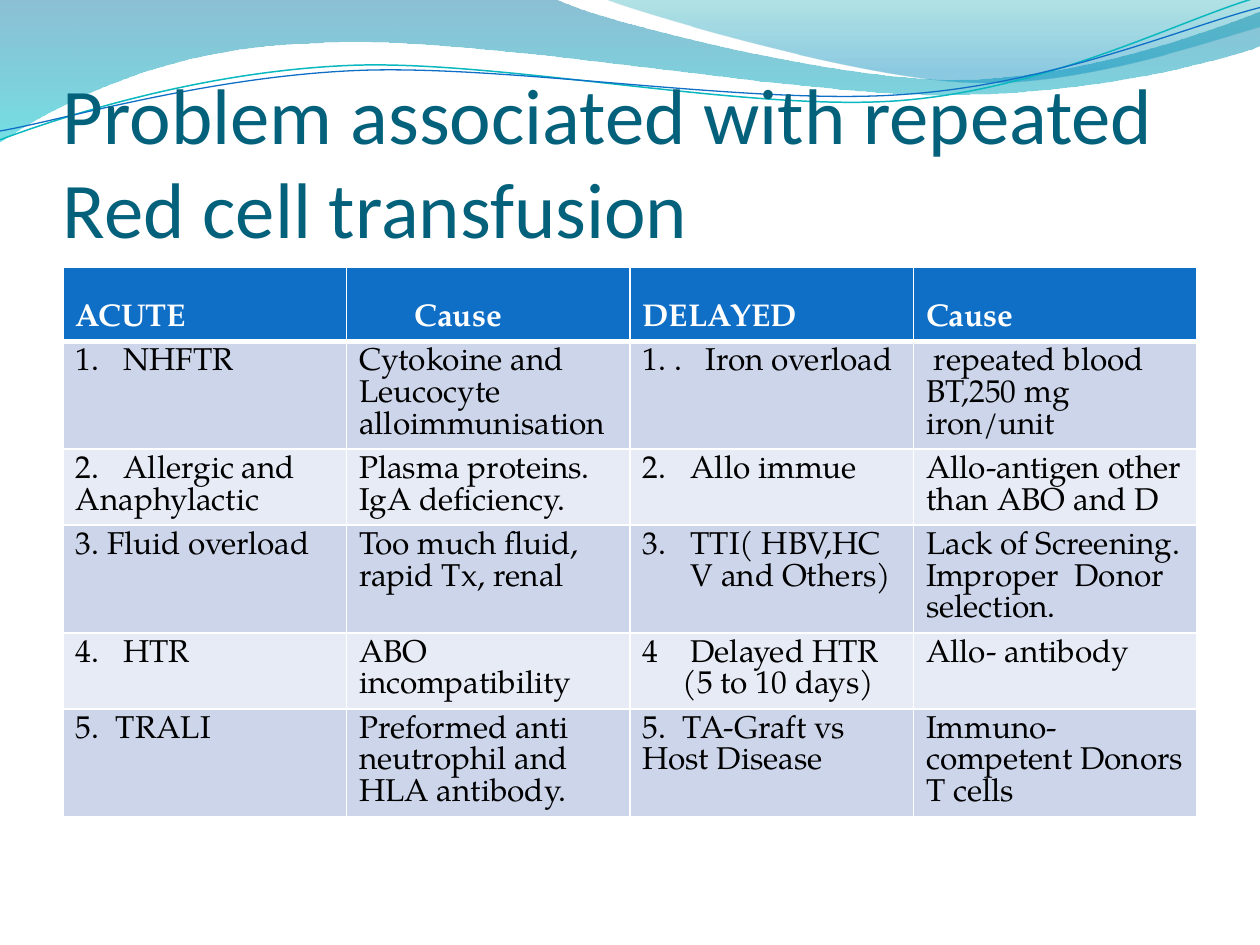
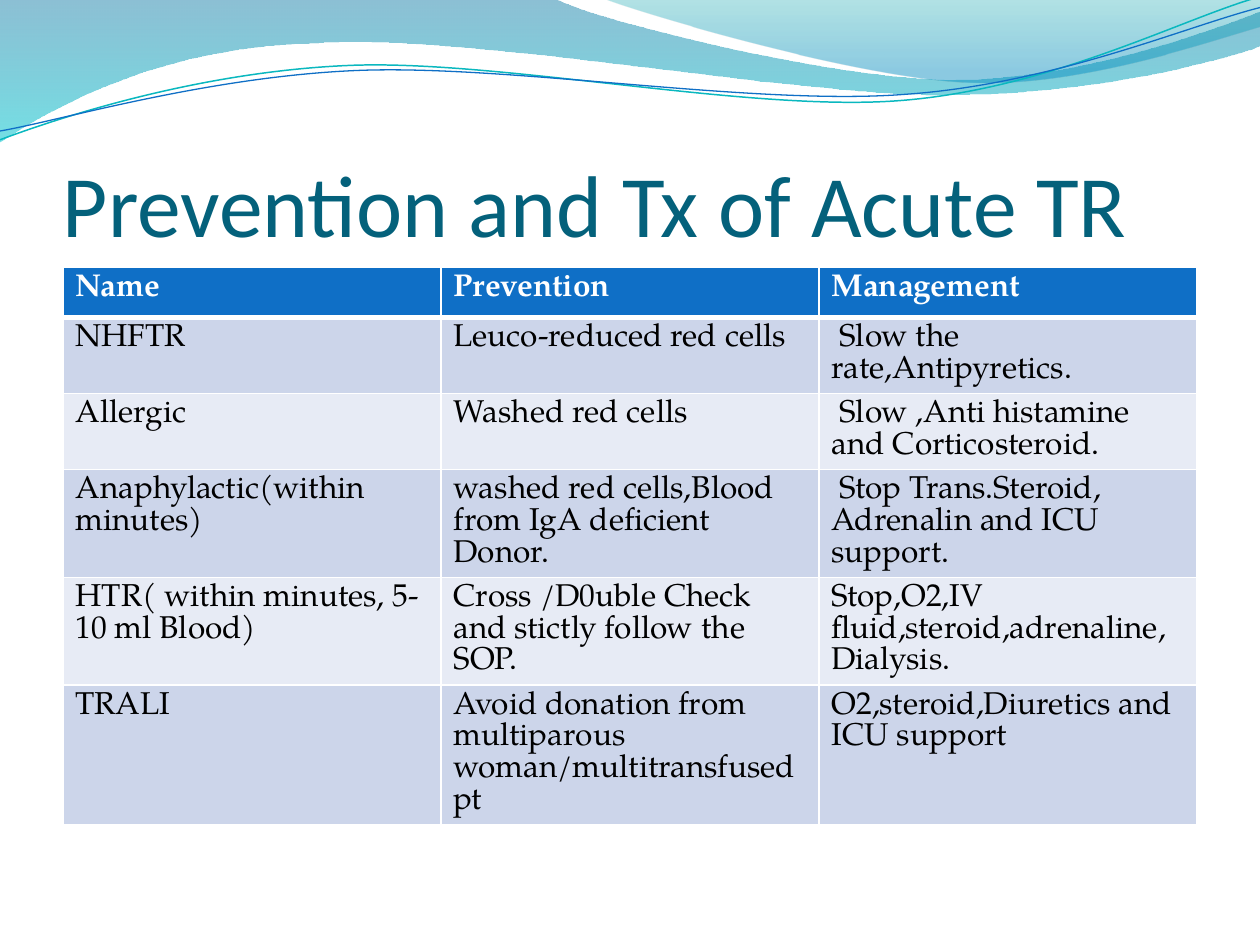
from dataclasses import dataclass

from lxml.etree import SubElement
from pptx import Presentation
from pptx.dml.color import RGBColor
from pptx.enum.text import MSO_ANCHOR as Anchor
from pptx.oxml.ns import qn
from pptx.util import Inches, Pt

COLORS = {
    "title": "04617B", "header": "0F6FC6", "band_dark": "CCD5EA",
    "band_light": "E7EBF5", "white": "FFFFFF", "black": "000000",
    "teal_line": "0AB8BF", "blue_line": "0F6FC6",
    "wave_top": "0074A1", "wave_bottom": "00C6CF",
    "crest_top": "00A1A9", "crest_bottom": "008BBF",
}
TITLE_FONT, TABLE_FONT = "Calibri", "TeX Gyre Pagella"
TABLE_SIZE, TABLE_LEADING = 18, 18.1
TITLE_BOX = (0.5, 0.77, 9, 1.25)
TABLE_BOX = (0.5, 2.12, 9, 2.46)
NUMBER_INDENT = 0.38

# Outlines: a start point, then points (2 numbers) or curves (6 numbers)
WAVE = [(0, 0), (4.4, -0.01), (4.76, 0.17, 6.64, 0.63, 7.58, 0.63),
        (8.53, 0.63, 9.58, 0.26, 10, 0.09), (10.01, 0.36),
        (9.83, 0.44, 8.7, 0.76, 7.46, 0.75),
        (6.22, 0.75, 3.82, 0.28, 2.57, 0.34),
        (1.29, 0.36, 0.46, 0.83, -0.01, 1.13)]
CREST = [(4.79, -0.01), (5.09, 0.11, 6.82, 0.62, 7.69, 0.65),
         (8.56, 0.69, 9.61, 0.32, 10, 0.21), (10, 0)]
TEAL_CURVE = [(0, 1.11), (0.48, 0.93, 1.58, 0.57, 2.77, 0.52),
              (3.95, 0.47, 5.93, 0.89, 7.13, 0.8),
              (8.33, 0.71, 9.38, 0.15, 9.98, -0.02)]
BLUE_CURVE = [(0, 1.04), (0.47, 0.96, 1.64, 0.61, 2.83, 0.56),
              (4.03, 0.51, 5.97, 0.84, 7.17, 0.75),
              (8.36, 0.67, 9.41, 0.21, 10, 0.06)]


@dataclass
class Item:
    """A table paragraph with a list number, an indent or a tab stop."""
    text: str
    number: int = 0
    scheme: str = "arabicPeriod"
    indent: float = 0
    tab: float = 0


PROBLEMS = [
    ["ACUTE", Item("Cause", indent=0.44), "DELAYED", "Cause"],
    [Item("NHFTR", 1), "Cytokoine and Leucocyte alloimmunisation",
     Item("1. .\tIron overload", tab=0.5),
     " repeated blood BT,250 mg iron/unit"],
    [Item("2.\tAllergic and Anaphylactic", tab=NUMBER_INDENT),
     ["Plasma proteins.", "IgA deficiency."],
     Item("Allo immue", 2), "Allo-antigen other than ABO and D"],
    ["3. Fluid overload", "Too much fluid, rapid Tx, renal",
     Item("TTI( HBV,HCV and Others)", 3),
     ["Lack of Screening.", "Improper  Donor selection."]],
    [Item("HTR", 4), "ABO incompatibility",
     [Item("Delayed HTR", 4, "arabicPlain"),
      Item("(5 to 10 days)", indent=0.32)], "Allo- antibody"],
    [Item("5.\tTRALI", tab=0.32),
     "Preformed anti neutrophil and HLA antibody.",
     Item("5.\tTA-Graft vs Host Disease", tab=0.32),
     "Immuno-competent Donors T cells"],
]
TREATMENTS = [
    ["Name", "Prevention", "Management"],
    ["NHFTR", "Leuco-reduced red cells", " Slow the rate,Antipyretics."],
    ["Allergic", "Washed red cells",
     " Slow ,Anti histamine and Corticosteroid."],
    ["Anaphylactic(within minutes)",
     "washed red cells,Blood from IgA deficient Donor.",
     " Stop Trans.Steroid, Adrenalin and ICU support."],
    ["HTR( within minutes, 5-10 ml Blood)",
     "Cross /D0uble Check and stictly follow the SOP.",
     "Stop,O2,IV fluid,steroid,adrenaline,Dialysis."],
    ["TRALI", "Avoid donation from multiparous woman/multitransfused pt",
     "O2,steroid,Diuretics and ICU support"],
]


def rgb(name):
    return RGBColor.from_string(COLORS[name])


def style_font(para, font_name, size, color, bold=False):
    for span in para.runs:
        font = span.font
        font.name, font.size, font.bold = font_name, Pt(size), bold
        font.color.rgb = rgb(color)


# Wave band
def bend_curves(shape, parts):
    """Join each curve's three straight segments into one Bezier segment."""
    segments = iter(list(shape._element.iter(qn("a:lnTo"))))
    for part in parts:
        first = next(segments)
        if len(part) == 2:
            continue
        curve = first.makeelement(qn("a:cubicBezTo"))
        first.addprevious(curve)
        for segment in (first, next(segments), next(segments)):
            curve.append(segment[0])
            segment.getparent().remove(segment)


def add_outline(page, outline, close):
    start, *parts = outline
    knots = [(Inches(part[i]), Inches(part[i + 1]))
             for part in parts for i in range(0, len(part), 2)]
    builder = page.shapes.build_freeform(*map(Inches, start))
    builder.add_line_segments(knots, close=close)
    shape = builder.convert_to_shape()
    bend_curves(shape, parts)
    shape.shadow.inherit = False
    return shape


def add_wave(page, outline, stops):
    """Fill an outline downwards with (position, color, opacity) stops."""
    shape = add_outline(page, outline, True)
    shape.line.fill.background()
    shape.fill.gradient()
    shape.fill.gradient_angle = 270
    for stop, (position, color, _) in zip(shape.fill.gradient_stops, stops):
        stop.position = position
        stop.color.rgb = rgb(color)
    fills = shape._element.spPr.iter(qn("a:srgbClr"))
    for fill, (_, _, opacity) in zip(fills, stops):
        for child in list(fill):
            fill.remove(child)
        SubElement(fill, qn("a:alpha"), val=str(opacity * 1000))


def add_wave_band(page):
    add_wave(page, WAVE, [(0, "wave_top", 45), (1, "wave_bottom", 55)])
    add_wave(page, CREST, [(0, "crest_top", 30), (0.8, "crest_bottom", 45)])
    for outline, color, width in ((TEAL_CURVE, "teal_line", 0.85),
                                  (BLUE_CURVE, "blue_line", 0.75)):
        curve = add_outline(page, outline, False)
        curve.fill.background()
        curve.line.color.rgb = rgb(color)
        curve.line.width = Pt(width)


# Title
def add_title(page, box, text, size):
    frame = page.shapes.add_textbox(*map(Inches, box)).text_frame
    frame.word_wrap = True
    frame.vertical_anchor = Anchor.BOTTOM
    frame.margin_left = frame.margin_right = frame.margin_bottom = 0
    frame.margin_top = Inches(0.05)
    frame.text = text
    style_font(frame.paragraphs[0], TITLE_FONT, size, "title")


# Table
def add_borders(cell, row):
    """White rules, with a thick one under the header row."""
    widths = {"lnL": 1, "lnR": 1, "lnT": 3 if row == 1 else 1,
              "lnB": 3 if row == 0 else 1}
    props = cell._tc.get_or_add_tcPr()
    for place, (side, width) in enumerate(widths.items()):
        line = SubElement(props, qn(f"a:{side}"), w=str(Pt(width)))
        fill = SubElement(line, qn("a:solidFill"))
        SubElement(fill, qn("a:srgbClr"), val=COLORS["white"])
        props.insert(place, line)


def format_item(para, item):
    para.line_spacing = Pt(TABLE_LEADING)
    props = para._p.get_or_add_pPr()
    if item.number:
        props.set("marL", str(Inches(NUMBER_INDENT)))
        props.set("indent", str(-Inches(NUMBER_INDENT)))
        SubElement(props, qn("a:buAutoNum"), type=item.scheme,
                   startAt=str(item.number))
    elif item.indent:
        props.set("marL", str(Inches(item.indent)))
    if item.tab:
        tabs = SubElement(props, qn("a:tabLst"))
        SubElement(tabs, qn("a:tab"), pos=str(Inches(item.tab)), algn="l")


def fill_cell(cell, content, row):
    is_header = row == 0
    frame = cell.text_frame
    items = content if isinstance(content, list) else [content]
    for index, item in enumerate(items):
        item = item if isinstance(item, Item) else Item(item)
        para = frame.add_paragraph() if index else frame.paragraphs[0]
        para.text = item.text
        format_item(para, item)
        style_font(para, TABLE_FONT, TABLE_SIZE,
                   "white" if is_header else "black", is_header)
    band = "header" if is_header else "band_dark" if row % 2 else "band_light"
    cell.fill.solid()
    cell.fill.fore_color.rgb = rgb(band)
    add_borders(cell, row)


def add_grid(page, box, rows, header_height):
    count = len(rows[0])
    table = page.shapes.add_table(len(rows), count, *map(Inches, box)).table
    table.first_row = table.horz_banding = False
    for column in table.columns:
        column.width = Inches(box[2] / count)
    for line in table.rows:
        line.height = Inches(box[3] / len(rows))
    table.rows[0].height = Inches(header_height)
    for row, contents in enumerate(rows):
        for column, content in enumerate(contents):
            fill_cell(table.cell(row, column), content, row)
    return table


# Slides
def add_table_slide(deck, title, title_size, rows, header_height=0.4,
                    header_anchor=Anchor.TOP):
    page = deck.slides.add_slide(deck.slide_layouts[6])
    add_wave_band(page)
    add_title(page, TITLE_BOX, title, title_size)
    table = add_grid(page, TABLE_BOX, rows, header_height)
    for cell in table.rows[0].cells:
        cell.vertical_anchor = header_anchor


def main():
    deck = Presentation()
    deck.slide_width, deck.slide_height = Inches(10), Inches(7.5)
    add_table_slide(deck, "Problem associated with repeated Red cell transfusion",
                    45, PROBLEMS, 0.59, Anchor.BOTTOM)
    add_table_slide(deck, "Prevention and Tx of Acute TR", 50, TREATMENTS)
    deck.save("out.pptx")


if __name__ == "__main__":
    main()
